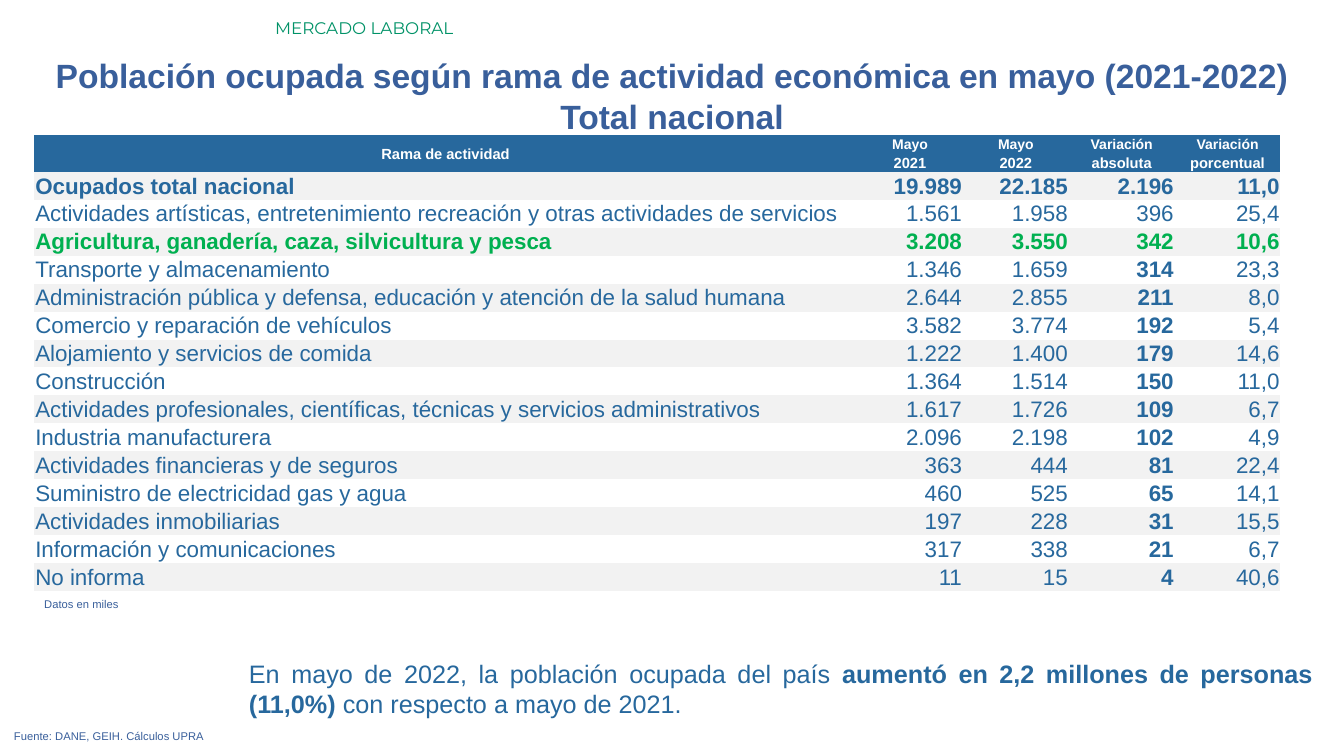
from dataclasses import dataclass

from pptx import Presentation
from pptx.dml.color import RGBColor
from pptx.enum.text import MSO_ANCHOR, MSO_AUTO_SIZE, PP_ALIGN
from pptx.util import Inches, Pt

LEFT, CENTER, RIGHT, JUSTIFY = PP_ALIGN.LEFT, PP_ALIGN.CENTER, PP_ALIGN.RIGHT, PP_ALIGN.JUSTIFY
MIDDLE = MSO_ANCHOR.MIDDLE
GROW = MSO_AUTO_SIZE.SHAPE_TO_FIT_TEXT

BLUE, TITLE_BLUE, TEAL, GREEN = "27689D", "395F9B", "009267", "00B050"
WHITE, GRAY = "FFFFFF", "F2F2F2"
PLAIN_STYLE = "{2D5ABB26-0587-4C30-8999-92F81FD0307C}"


@dataclass
class Run:
    text: str
    bold: bool = False


@dataclass
class TextBox:
    box: tuple[float, float, float, float]
    paragraphs: list[list[Run]]
    size: float
    color: str
    align: PP_ALIGN = JUSTIFY
    font: str = "Arial"


@dataclass
class Activity:
    name: str
    values: tuple[str, str, str, str]
    bold_columns: tuple[int, ...] = (3,)
    color: str = BLUE


ALL_COLUMNS = (0, 1, 2, 3, 4)
TEXTS = [
    TextBox((2.63, 0.13, 10.7, 0.3), [[Run("MERCADO LABORAL")]], 12, TEAL, LEFT, "Montserrat"),
    TextBox((0, 0.5, 13.33, 0.91), [
        [Run("Población ocupada según rama de actividad económica en mayo (2021-2022)", True)],
        [Run("Total nacional", True)],
    ], 24, TITLE_BLUE, CENTER),
    TextBox((2.37, 6.48, 10.75, 0.71), [[
        Run("En mayo de 2022, la población ocupada del país "),
        Run("aumentó en 2,2 millones de personas (11,0%) ", True),
        Run("con respecto a mayo de 2021."),
    ]], 18, BLUE),
    TextBox((0.04, 7.19, 12.91, 0.24), [[Run("Fuente: DANE, GEIH. Cálculos UPRA")]], 8, TITLE_BLUE),
    TextBox((0.34, 5.88, 12.91, 0.24), [[Run("Datos en miles")]], 8, TITLE_BLUE),
]
HEADERS = [
    ("Rama de actividad", "Mayo", "Mayo", "Variación", "Variación"),
    ("", "2021", "2022", "absoluta", "porcentual"),
]
ACTIVITIES = [
    Activity("Ocupados total nacional", ("19.989", "22.185", "2.196", "11,0"), ALL_COLUMNS),
    Activity("Actividades artísticas, entretenimiento recreación y otras actividades de servicios",
             ("1.561", "1.958", "396", "25,4"), ()),
    Activity("Agricultura, ganadería, caza, silvicultura y pesca",
             ("3.208", "3.550", "342", "10,6"), ALL_COLUMNS, GREEN),
    Activity("Transporte y almacenamiento", ("1.346", "1.659", "314", "23,3")),
    Activity("Administración pública y defensa, educación y atención de la salud humana",
             ("2.644", "2.855", "211", "8,0")),
    Activity("Comercio y reparación de vehículos", ("3.582", "3.774", "192", "5,4")),
    Activity("Alojamiento y servicios de comida", ("1.222", "1.400", "179", "14,6")),
    Activity("Construcción", ("1.364", "1.514", "150", "11,0")),
    Activity("Actividades profesionales, científicas, técnicas y servicios administrativos",
             ("1.617", "1.726", "109", "6,7")),
    Activity("Industria manufacturera", ("2.096", "2.198", "102", "4,9")),
    Activity("Actividades financieras y de seguros", ("363", "444", "81", "22,4")),
    Activity("Suministro de electricidad gas y agua", ("460", "525", "65", "14,1")),
    Activity("Actividades inmobiliarias", ("197", "228", "31", "15,5")),
    Activity("Información y comunicaciones", ("317", "338", "21", "6,7")),
    Activity("No informa", ("11", "15", "4", "40,6")),
]
COLUMN_WIDTHS = [8.16, 1.05, 1.05, 1.05, 1.05]
TABLE_LEFT, TABLE_TOP, TABLE_HEIGHT, HEADER_HEIGHT = 0.34, 1.34, 4.52, 0.18


def rgb(color: str) -> RGBColor:
    return RGBColor.from_string(color)


def add_run(p, run: Run, size: float, color: str, font: str = "Arial") -> None:
    r = p.add_run()
    r.text = run.text
    for name, value in {"name": font, "size": Pt(size), "bold": run.bold}.items():
        setattr(r.font, name, value)
    r.font.color.rgb = rgb(color)


def add_text(s, item: TextBox) -> None:
    tf = s.shapes.add_textbox(*map(Inches, item.box)).text_frame
    tf.word_wrap = True
    tf.auto_size = GROW
    for i, runs in enumerate(item.paragraphs):
        p = tf.add_paragraph() if i else tf.paragraphs[0]
        p.alignment = item.align
        for run in runs:
            add_run(p, run, item.size, item.color, item.font)


def fill_cell(cell, run: Run, size: float, color: str, align: PP_ALIGN, fill: str | None) -> None:
    cell_format = {
        "vertical_anchor": MIDDLE,
        "margin_left": Inches(0.01),
        "margin_right": Inches(0.01),
        "margin_top": Inches(0.01),
        "margin_bottom": 0,
    }
    for name, value in cell_format.items():
        setattr(cell, name, value)
    if fill:
        cell.fill.solid()
        cell.fill.fore_color.rgb = rgb(fill)
    else:
        cell.fill.background()
    p = cell.text_frame.paragraphs[0]
    p.alignment = align
    if run.text:
        add_run(p, run, size, color)
    else:
        p.font.size = Pt(size)


def add_activity_table(s) -> None:
    header_count = len(HEADERS)
    frame = s.shapes.add_table(
        header_count + len(ACTIVITIES), len(COLUMN_WIDTHS),
        Inches(TABLE_LEFT), Inches(TABLE_TOP), Inches(sum(COLUMN_WIDTHS)), Inches(TABLE_HEIGHT))
    table = frame.table
    table.first_row = table.horz_banding = False
    frame._element.xpath(".//a:tableStyleId")[0].text = PLAIN_STYLE

    # Column and row sizes
    for column, width in zip(table.columns, COLUMN_WIDTHS):
        column.width = Inches(width)
    body_height = (TABLE_HEIGHT - header_count * HEADER_HEIGHT) / len(ACTIVITIES)
    for i, row in enumerate(table.rows):
        row.height = Inches(HEADER_HEIGHT if i < header_count else body_height)

    # Two-line header
    for i, labels in enumerate(HEADERS):
        for j, label in enumerate(labels):
            size = 10 if i == 0 and j else 10.5
            fill_cell(table.cell(i, j), Run(label, True), size, WHITE, CENTER, BLUE)
    table.cell(0, 0).merge(table.cell(1, 0))

    # Activities on alternating bands
    for i, activity in enumerate(ACTIVITIES):
        fill = None if i % 2 else GRAY
        for j, text in enumerate((activity.name, *activity.values)):
            run = Run(text, j in activity.bold_columns)
            fill_cell(table.cell(i + header_count, j), run, 16, activity.color,
                      RIGHT if j else LEFT, fill)


def main() -> None:
    prs = Presentation()
    prs.slide_width, prs.slide_height = Inches(13.33), Inches(7.5)
    s = prs.slides.add_slide(prs.slide_layouts[6])
    for item in TEXTS:
        add_text(s, item)
    add_activity_table(s)
    prs.save("out.pptx")


if __name__ == "__main__":
    main()
